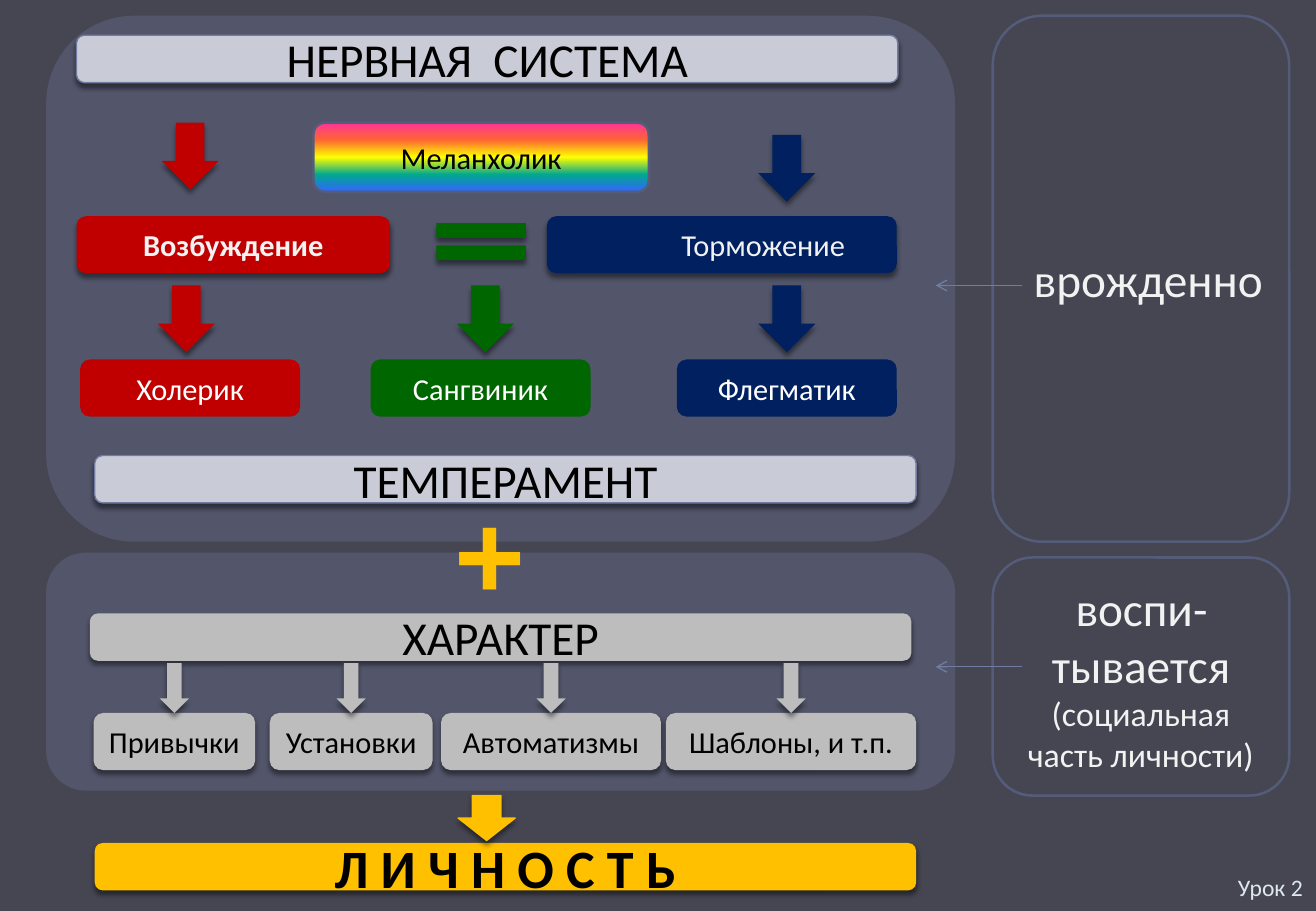
from dataclasses import dataclass

from lxml import etree
from pptx import Presentation
from pptx.dml.color import RGBColor
from pptx.enum.shapes import MSO_CONNECTOR, MSO_SHAPE
from pptx.enum.text import MSO_ANCHOR, MSO_AUTO_SIZE, PP_ALIGN
from pptx.oxml.ns import qn
from pptx.util import Inches, Pt

BOX, ARROW, EQUAL = MSO_SHAPE.ROUNDED_RECTANGLE, MSO_SHAPE.DOWN_ARROW, MSO_SHAPE.MATH_EQUAL
STRAIGHT = MSO_CONNECTOR.STRAIGHT
MIDDLE = MSO_ANCHOR.MIDDLE
LEFT, CENTER, RIGHT = PP_ALIGN.LEFT, PP_ALIGN.CENTER, PP_ALIGN.RIGHT


@dataclass(frozen=True)
class Theme:
    background: str = "464653"
    panel: str = "727CA3"
    panel_alpha: int = 30
    outline: str = "545C79"
    bar: str = "C9CCD7"
    red: str = "C00000"
    blue: str = "002060"
    green: str = "006600"
    gray: str = "BDBDBD"
    gold: str = "FFC000"
    black: str = "000000"
    white: str = "FFFFFF"
    pale: str = "F2F2F2"
    footer: str = "DDE9EC"
    rainbow: tuple = ("FF3399", "FF6633", "FFFF00", "01A78F", "3366FF")
    font: str = "Calibri"
    sign_font: str = "Arial"
    small: int = 14
    label: int = 18
    note: int = 20
    heading: int = 28
    result: int = 32
    sign: int = 72
    thin: float = 0.79
    thick: float = 1.5


T = Theme()

# Content: positions count columns and rows of a one-inch grid
COLUMNS, ROWS = 10.83, 7.5
PANEL_LEFT, PANEL_WIDTH = 0.38, 7.48
PANELS = [(4.55, 1.96), (0.13, 4.33)]  # top, height
BAR_WIDTH, BAR_HEIGHT, LABEL_HEIGHT = 6.76, 0.39, 0.47
BARS = [  # text, left, top, fill, line, size, bold
    ("НЕРВНАЯ  СИСТЕМА", 0.63, 0.29, T.bar, T.panel, T.heading, False),
    ("ТЕМПЕРАМЕНТ", 0.78, 3.75, T.bar, T.panel, T.heading, False),
    ("ХАРАКТЕР", 0.74, 5.05, T.gray, None, T.heading, False),
    ("Л И Ч Н О С Т Ь", 0.78, 6.94, T.gold, None, T.result, True),
]
PROCESSES = [  # text, left, width, fill, bold, extra indent
    ("Возбуждение", 0.63, 2.58, T.red, True, 0),
    ("Торможение", 4.5, 2.88, T.blue, False, 0.68),
]
PROCESS_TOP = 1.78
TEMPERAMENTS = [("Холерик", 0.66, T.red), ("Сангвиник", 3.05, T.green), ("Флегматик", 5.57, T.blue)]
TEMPERAMENT_TOP, TEMPERAMENT_WIDTH = 2.96, 1.81
MELANCHOLIC = ("Меланхолик", (2.58, 1.01, 2.76, 0.57))
BALANCE = (3.46, 1.73, 1, 0.52)
ARROW_WIDTH, ARROW_HEIGHT = 0.47, 0.55
ARROWS = [  # left, top, fill
    (1.33, 1.01, T.red), (6.24, 1.11, T.blue),
    (1.3, 2.35, T.red), (3.76, 2.35, T.green), (6.24, 2.35, T.blue),
]
TRAITS = [  # text, left, width
    ("Привычки", 0.77, 1.33), ("Установки", 2.22, 1.34),
    ("Автоматизмы", 3.63, 1.81), ("Шаблоны, и т.п.", 5.48, 2.06),
]
TRAIT_TOP, TRAIT_ARROW = 5.87, (0.24, 0.41)
RESULT_ARROW = (3.77, 6.55, 0.47, 0.37)
PLUS = ("+", (3.64, 3.89, 0.79, 1.31))
FOOTER = ("Урок 2", (4.4, 7.1, 6.42, 0.4))
ORIGIN_LEFT, ORIGIN_WIDTH = 8.17, 2.44
ORIGINS = [  # top, height, alignment, paragraphs with sizes, pointer row
    (0.13, 4.33, RIGHT, [("врожденно", T.heading)], 2.35),
    (4.59, 1.96, CENTER,
     [("воспи-тывается", T.heading), ("(социальная часть личности)", T.note)], 5.49),
]
POINTER_FROM, POINTER_TO = 8.41, 7.7

prs = Presentation()
prs.slide_width, prs.slide_height = Inches(COLUMNS), Inches(ROWS)
slide = prs.slides.add_slide(prs.slide_layouts[6])
COLUMN, ROW = prs.slide_width / COLUMNS, prs.slide_height / ROWS


def rgb(value):
    return RGBColor.from_string(value)


def place(cells):
    left, top, width, height = cells
    return round(left * COLUMN), round(top * ROW), round(width * COLUMN), round(height * ROW)


def color_node(parent, value, alpha=None):
    node = etree.SubElement(parent, qn("a:srgbClr"), val=value)
    if alpha:
        etree.SubElement(node, qn("a:alpha"), val=str(alpha * 1000))


def write(frame, paragraphs, color, align, bold=False, font=T.font):
    frame.text = "\n".join(text for text, _ in paragraphs)
    for paragraph, (_, size) in zip(frame.paragraphs, paragraphs):
        paragraph.alignment = align
        for run in paragraph.runs:
            run.font.name, run.font.size, run.font.bold = font, Pt(size), bold
            run.font.color.rgb = rgb(color)


def add_figure(kind, cells, fill=None, line=None, line_width=T.thin, shadow=True):
    figure = slide.shapes.add_shape(kind, *place(cells))
    if fill:
        figure.fill.solid()
        figure.fill.fore_color.rgb = rgb(fill)
    else:
        figure.fill.background()
    if line:
        figure.line.color.rgb = rgb(line)
        figure.line.width = Pt(line_width)
    else:
        figure.line.fill.background()
    figure.shadow.inherit = False
    if shadow:
        effects = figure.element.spPr.find(qn("a:effectLst"))
        outer = etree.SubElement(effects, qn("a:outerShdw"), blurRad=str(Pt(3)),
                                 dist=str(Pt(2.4)), dir="5400000", rotWithShape="0")
        color_node(outer, T.black, 45)
    return figure


def add_label(text, cells, fill, color, size=T.label, bold=False, **style):
    label = add_figure(BOX, cells, fill, **style)
    write(label.text_frame, [(text, size)], color, CENTER, bold)
    return label


# Translucent panels and footer
for top, height in PANELS:
    panel = add_figure(BOX, (PANEL_LEFT, top, PANEL_WIDTH, height), T.panel, shadow=False)
    tint = panel.element.spPr.find(qn("a:solidFill"))
    tint.clear()
    color_node(tint, T.panel, T.panel_alpha)

footer = slide.shapes.add_textbox(*place(FOOTER[1])).text_frame
footer.word_wrap, footer.vertical_anchor = True, MIDDLE
write(footer, [(FOOTER[0], T.small)], T.footer, RIGHT)

# Heading bars
for text, left, top, fill, line, size, bold in BARS:
    add_label(text, (left, top, BAR_WIDTH, BAR_HEIGHT), fill, T.black, size, bold, line=line)

# Nervous processes and temperaments
for text, left, width, fill, bold, indent in PROCESSES:
    process = add_label(text, (left, PROCESS_TOP, width, LABEL_HEIGHT), fill, T.pale, bold=bold)
    process.text_frame.margin_left += Inches(indent)

for text, left, fill in TEMPERAMENTS:
    add_label(text, (left, TEMPERAMENT_TOP, TEMPERAMENT_WIDTH, LABEL_HEIGHT), fill, T.white,
              shadow=False)

melancholic = add_label(*MELANCHOLIC, T.rainbow[0], T.black, line=T.outline,
                        line_width=T.thick, shadow=False)
melancholic.fill.gradient()
melancholic.fill.gradient_angle = 270
stops = melancholic.element.spPr.find(qn("a:gradFill")).find(qn("a:gsLst"))
stops.clear()
for index, color in enumerate(T.rainbow):
    position = index * 100000 // (len(T.rainbow) - 1)
    color_node(etree.SubElement(stops, qn("a:gs"), pos=str(position)), color)

for left, top, fill in ARROWS:
    add_figure(ARROW, (left, top, ARROW_WIDTH, ARROW_HEIGHT), fill)
add_figure(EQUAL, BALANCE, T.green)

# Character traits, each under its own arrow
arrow_width, arrow_height = TRAIT_ARROW
for text, left, width in TRAITS:
    add_label(text, (left, TRAIT_TOP, width, LABEL_HEIGHT), T.gray, T.black)
    arrow_left = left + (width - arrow_width) / 2
    add_figure(ARROW, (arrow_left, TRAIT_TOP - arrow_height, *TRAIT_ARROW), T.gray)

# Sum and result
plus = slide.shapes.add_textbox(*place(PLUS[1])).text_frame
plus.word_wrap, plus.auto_size = False, MSO_AUTO_SIZE.SHAPE_TO_FIT_TEXT
write(plus, [(PLUS[0], T.sign)], T.gold, LEFT, True, T.sign_font)
add_figure(ARROW, RESULT_ARROW, T.gold, T.gold)

# Origins with pointers to the panels
for top, height, align, paragraphs, pointer_row in ORIGINS:
    origin = add_figure(BOX, (ORIGIN_LEFT, top, ORIGIN_WIDTH, height), line=T.outline,
                        line_width=T.thick, shadow=False)
    write(origin.text_frame, paragraphs, T.pale, align)
    y = round(pointer_row * ROW)
    pointer = slide.shapes.add_connector(STRAIGHT, round(POINTER_FROM * COLUMN), y,
                                         round(POINTER_TO * COLUMN), y)
    pointer.line.color.rgb, pointer.line.width = rgb(T.panel), Pt(T.thin)
    etree.SubElement(pointer.line._get_or_add_ln(), qn("a:tailEnd"), type="arrow")
    etree.SubElement(pointer.element.spPr, qn("a:effectLst"))

slide.background.fill.solid()
slide.background.fill.fore_color.rgb = rgb(T.background)
prs.save("out.pptx")
